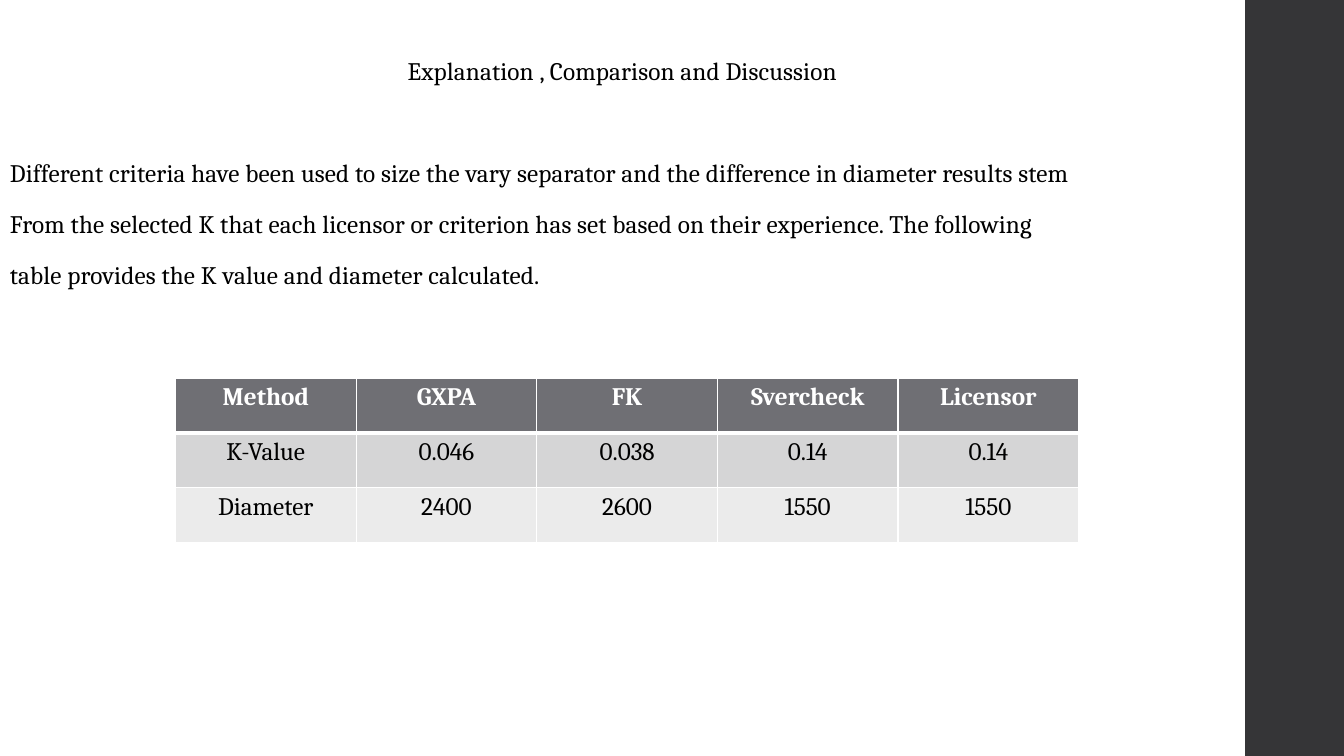
from pptx import Presentation
from pptx.dml.color import RGBColor
from pptx.enum.shapes import MSO_SHAPE
from pptx.enum.text import MSO_ANCHOR, PP_ALIGN
from pptx.oxml import parse_xml
from pptx.oxml.ns import nsdecls
from pptx.util import Inches, Pt

BLACK = RGBColor(0x00, 0x00, 0x00)
WHITE = RGBColor(0xFF, 0xFF, 0xFF)
DARK = RGBColor(0x35, 0x35, 0x37)
HEADER = RGBColor(0x6F, 0x6F, 0x74)
BANDS = [RGBColor(0xD5, 0xD5, 0xD6), RGBColor(0xEB, 0xEB, 0xEB)]

TITLE = "Explanation , Comparison and Discussion"
BODY = [
    "Different criteria have been used to size the vary separator and the difference in diameter results stem",
    "From the selected K that each licensor or criterion has set based on their experience. The following",
    "table provides the K value and diameter calculated.",
]
ROWS = [
    ["Method", "GXPA", "FK", "Svercheck", "Licensor"],
    ["K-Value", "0.046", "0.038", "0.14", "0.14"],
    ["Diameter", "2400", "2600", "1550", "1550"],
]


class SlideBuilder:
    """Hold the text style and the current slide, and add its elements."""

    font = {"name": "Cambria", "size": Pt(18), "bold": False}
    spacing = {"line_spacing": 0.95, "space_before": Pt(14), "space_after": Pt(2)}

    def __init__(self, prs):
        self.s = prs.slides.add_slide(prs.slide_layouts[5])

    def run(self, p, text, color=BLACK, **formats):
        r = p.add_run()
        r.text = text
        for name, value in {**self.font, **formats}.items():
            setattr(r.font, name, value)
        r.font.color.rgb = color
        return r

    def paragraph(self, p, text, align):
        for name, value in {**self.spacing, "alignment": align}.items():
            setattr(p, name, value)
        r = self.run(p, text)
        r._r.get_or_add_rPr().set("spc", "10")

    def bar(self, left, top, width, height):
        sp = self.s.shapes.add_shape(MSO_SHAPE.RECTANGLE, left, top, width, height)
        sp.shadow.inherit = False
        sp.fill.solid()
        sp.fill.fore_color.rgb = DARK
        sp.line.fill.background()

    def title(self, text, left, top, width, height):
        sp = self.s.shapes.title
        box = {"left": left, "top": top, "width": width, "height": height}
        for name, value in box.items():
            setattr(sp, name, value)
        tf = sp.text_frame
        tf.word_wrap = True
        tf.vertical_anchor = MSO_ANCHOR.MIDDLE
        self.paragraph(tf.paragraphs[0], text, PP_ALIGN.CENTER)

    def body(self, lines, left, top, width, height):
        tf = self.s.shapes.add_textbox(left, top, width, height).text_frame
        tf.word_wrap = True
        for i, line in enumerate(lines):
            p = tf.add_paragraph() if i else tf.paragraphs[0]
            self.paragraph(p, line, PP_ALIGN.LEFT)

    def borders(self, cell, top, bottom):
        tcPr = cell._tc.get_or_add_tcPr()
        for side, width in {"L": 1, "R": 1, "T": top, "B": bottom}.items():
            tcPr.append(parse_xml(
                f'<a:ln{side} {nsdecls("a")} w="{Pt(width)}"><a:solidFill>'
                f'<a:srgbClr val="{WHITE}"/></a:solidFill></a:ln{side}>'))

    def table(self, rows, left, top, width, height):
        table = self.s.shapes.add_table(
            len(rows), len(rows[0]), left, top, width, height).table
        for i, row in enumerate(rows):
            header = i == 0
            for j, text in enumerate(row):
                cell = table.cell(i, j)
                self.borders(cell, 3 if i == 1 else 1, 3 if header else 1)
                cell.fill.solid()
                cell.fill.fore_color.rgb = HEADER if header else BANDS[(i - 1) % 2]
                p = cell.text_frame.paragraphs[0]
                p.alignment = PP_ALIGN.CENTER
                self.run(p, text, WHITE if header else BLACK, bold=header)


def main():
    prs = Presentation()
    prs.slide_width, prs.slide_height = Inches(13.33), Inches(7.5)
    slide = SlideBuilder(prs)
    slide.bar(Inches(12.35), 0, Inches(0.98), prs.slide_height)
    slide.title(TITLE, 0, Inches(0.46), Inches(12.35), Inches(0.5))
    slide.body(BODY, 0, Inches(1.53), Inches(12.35), Inches(1.6))
    slide.table(ROWS, Inches(1.74), Inches(3.75), Inches(8.96), Inches(1.63))
    prs.save("out.pptx")


if __name__ == "__main__":
    main()
